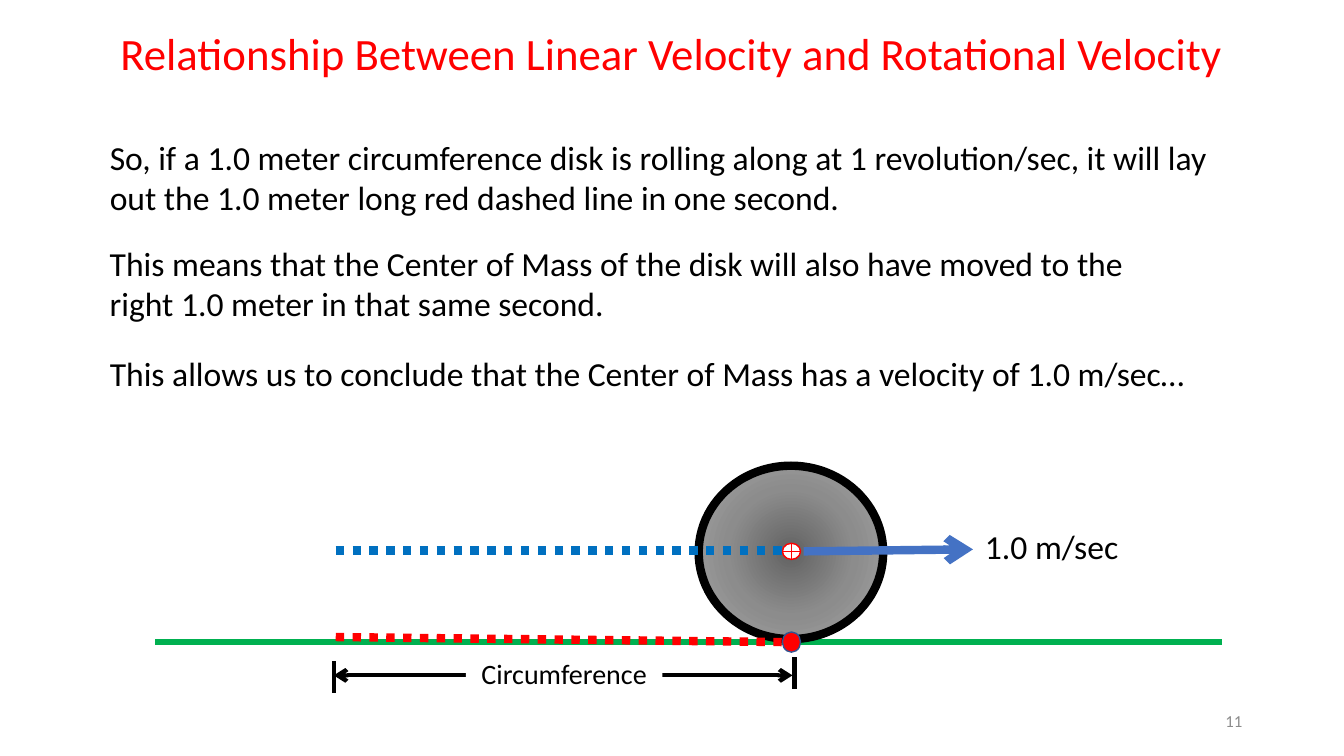
import dataclasses

import lxml.etree
import pptx
import pptx.dml.color
import pptx.enum.dml
import pptx.enum.shapes
import pptx.enum.text
import pptx.oxml
import pptx.oxml.ns
import pptx.util

SHAPES = pptx.enum.shapes.MSO_SHAPE
ALIGN = pptx.enum.text.PP_ALIGN
ANCHOR = pptx.enum.text.MSO_ANCHOR
EMU_PER_PX = 9144


@dataclasses.dataclass(frozen=True)
class Theme:
    font: str = "Calibri"
    title_size: int = 32
    body_size: int = 24
    label_size: int = 20
    number_size: int = 12
    black: str = "000000"
    white: str = "FFFFFF"
    red: str = "FF0000"
    green: str = "00B050"
    blue: str = "0070C0"
    velocity: str = "4472C4"
    dot_edge: str = "325491"
    gray: str = "8C8C8C"
    disk_stops: tuple = ((0, "626262"), (50, "8C8C8C"), (100, "A6A6A6"))


def px(length):
    return pptx.util.Emu(length * EMU_PER_PX)


def rgb(color):
    return pptx.dml.color.RGBColor.from_string(color)


def apply(target, settings):
    for name, value in settings.items():
        setattr(target, name, value)


class SlideBuilder:
    def __init__(self, slide, theme):
        self.slide = slide
        self.theme = theme

    def fill_text(self, shape, text, size, color, align=ALIGN.LEFT, anchor=ANCHOR.TOP):
        frame = shape.text_frame
        apply(frame, {"word_wrap": True, "vertical_anchor": anchor})
        paragraph = frame.paragraphs[0]
        paragraph.alignment = align
        run = paragraph.add_run()
        run.text = text
        apply(run.font, {"name": self.theme.font, "size": pptx.util.Pt(size)})
        run.font.color.rgb = rgb(color)

    def text(self, box, text, size, color, **layout):
        shape = self.slide.shapes.add_textbox(*map(px, box))
        self.fill_text(shape, text, size, color, **layout)

    def shape(self, kind, box, fill, edge=None, width=1):
        shape = self.slide.shapes.add_shape(kind, *map(px, box))
        shape.shadow.inherit = False
        shape.fill.solid()
        shape.fill.fore_color.rgb = rgb(fill)
        if edge:
            shape.line.color.rgb = rgb(edge)
            shape.line.width = pptx.util.Pt(width)
        else:
            shape.line.fill.background()
        return shape

    def radial_fill(self, shape, stops):
        stop_xml = "".join(
            f'<a:gs pos="{position * 1000}"><a:srgbClr val="{color}"/></a:gs>'
            for position, color in stops
        )
        gradient = pptx.oxml.parse_xml(
            f'<a:gradFill {pptx.oxml.ns.nsdecls("a")} rotWithShape="1">'
            f"<a:gsLst>{stop_xml}</a:gsLst>"
            '<a:path path="circle"><a:fillToRect l="50000" t="50000" r="50000" b="50000"/></a:path>'
            "</a:gradFill>"
        )
        properties = shape._element.spPr
        solid = properties.find(pptx.oxml.ns.qn("a:solidFill"))
        properties.replace(solid, gradient)

    def line(self, start, end, color, width, dotted=False, arrows=()):
        connector = self.slide.shapes.add_connector(
            pptx.enum.shapes.MSO_CONNECTOR.STRAIGHT, *map(px, start + end)
        )
        connector.line.color.rgb = rgb(color)
        connector.line.width = pptx.util.Pt(width)
        if dotted:
            connector.line.dash_style = pptx.enum.dml.MSO_LINE.ROUND_DOT
        properties = connector._element.spPr
        outline = properties.find(pptx.oxml.ns.qn("a:ln"))
        for tag in arrows:
            lxml.etree.SubElement(outline, pptx.oxml.ns.qn(tag), type="arrow")
        lxml.etree.SubElement(properties, pptx.oxml.ns.qn("a:effectLst"))


def main():
    presentation = pptx.Presentation()
    apply(presentation, {"slide_width": px(1333), "slide_height": px(750)})
    slide = presentation.slides.add_slide(presentation.slide_layouts[6])
    theme = Theme()
    builder = SlideBuilder(slide, theme)

    builder.line((154, 637), (1212, 637), theme.green, 4.5)
    disk = builder.shape(SHAPES.OVAL, (693, 462, 183, 172), theme.gray, theme.black, 6)
    builder.radial_fill(disk, theme.disk_stops)
    builder.shape(SHAPES.OVAL, (776, 627, 18, 20), theme.red, theme.dot_edge)
    builder.line((333, 632), (776, 637), theme.red, 6, dotted=True)
    builder.shape(SHAPES.FLOWCHART_OR, (776, 539, 18, 16), theme.white, theme.red)

    for x, top in ((331, 656), (788, 652)):
        builder.line((x, top), (x, top + 32), theme.black, 3)
    builder.line((331, 670), (786, 670), theme.black, 3, arrows=("a:headEnd", "a:tailEnd"))
    label = builder.shape(SHAPES.RECTANGLE, (462, 646, 195, 44), theme.white)
    builder.fill_text(label, "Circumference", theme.label_size, theme.black, align=ALIGN.CENTER)

    builder.line((797, 547), (965, 545), theme.velocity, 6, arrows=("a:tailEnd",))
    builder.line((333, 546), (776, 546), theme.blue, 6, dotted=True)

    body_texts = (
        ((99, 131, 1142, 91),
         "So, if a 1.0 meter circumference disk is rolling along at 1 revolution/sec, "
         "it will lay out the 1.0 meter long red dashed line in one second."),
        ((99, 236, 1094, 91),
         "This means that the Center of Mass of the disk will also have moved to the "
         "right 1.0 meter in that same second."),
        ((99, 345, 1168, 50),
         "This allows us to conclude that the Center of Mass has a velocity of 1.0 m/sec…"),
        ((967, 517, 179, 50), "1.0 m/sec"),
    )
    for box, text in body_texts:
        builder.text(box, text, theme.body_size, theme.black)

    builder.text((105, 21, 1122, 64),
                 "Relationship Between Linear Velocity and Rotational Velocity",
                 theme.title_size, theme.red, align=ALIGN.CENTER)
    builder.text((942, 695, 300, 40), "11", theme.number_size, theme.gray,
                 align=ALIGN.RIGHT, anchor=ANCHOR.MIDDLE)

    presentation.save("out.pptx")


if __name__ == "__main__":
    main()
